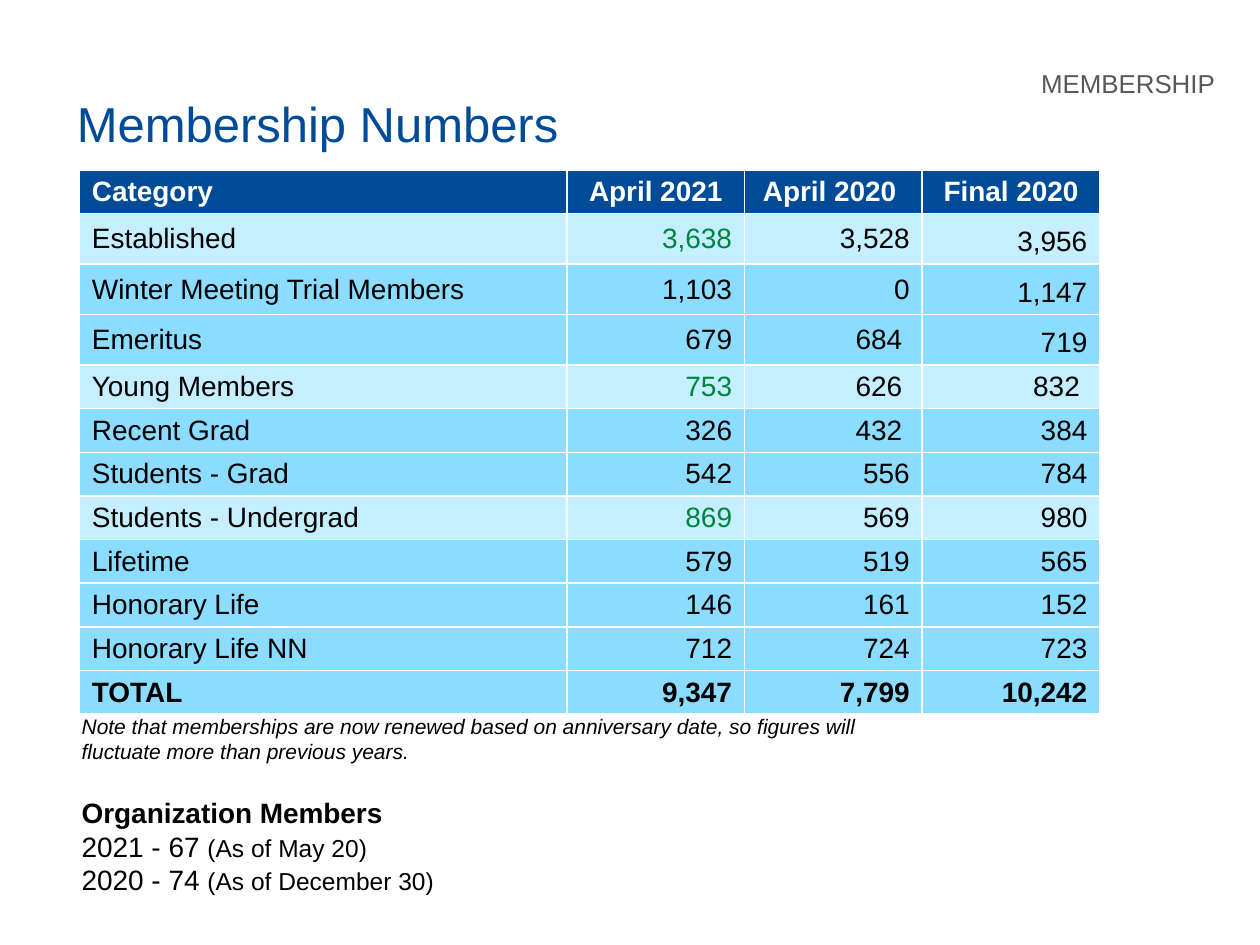
from dataclasses import dataclass

import lxml.etree
import pptx
import pptx.dml.color
import pptx.enum.text
import pptx.oxml.ns
import pptx.util
from pptx.util import Inches, Pt

ALIGN = pptx.enum.text.PP_ALIGN
COLORS = {
    "navy": "004B98",
    "gray": "56595C",
    "black": "000000",
    "white": "FFFFFF",
    "green": "00833F",
    "light": "C5EEFF",
    "blue": "8BDCFF",
}
COLUMN_WIDTHS = (3.87, 1.41, 1.41, 1.41)
ROW_HEIGHT = 4.16 / 12
TALL_ROW_HEIGHT = 0.4
CELL_INSET = 0.1
SHIFTED_INSET = 0.16


@dataclass(frozen=True)
class Row:
    values: tuple[str, str, str, str]
    highlight: bool = False
    tall: bool = False
    header: bool = False
    total: bool = False
    shifted: tuple[int, ...] = ()


@dataclass(frozen=True)
class Span:
    text: str
    size: float
    bold: bool = False
    italic: bool = False


ROWS = (
    Row(("Category", "April 2021", "April 2020", "Final 2020"), header=True, shifted=(2,)),
    Row(("Established", "3,638", "3,528", "3,956"), highlight=True, tall=True),
    Row(("Winter Meeting Trial Members", "1,103", "0", "1,147"), tall=True),
    Row(("Emeritus", "679", "684", "719"), tall=True, shifted=(2,)),
    Row(("Young Members", "753", "626", "832"), highlight=True, shifted=(2, 3)),
    Row(("Recent Grad", "326", "432", "384"), shifted=(2,)),
    Row(("Students - Grad", "542", "556", "784")),
    Row(("Students - Undergrad", "869", "569", "980"), highlight=True),
    Row(("Lifetime", "579", "519", "565")),
    Row(("Honorary Life", "146", "161", "152")),
    Row(("Honorary Life NN", "712", "724", "723")),
    Row(("TOTAL", "9,347", "7,799", "10,242"), total=True),
)

NOTES = (
    (Span("Note that memberships are now renewed based on anniversary date, "
          "so figures will fluctuate more than previous years.", 12, italic=True),),
    (Span("Organization Members", 16, bold=True),),
    (Span("2021 - 67 ", 16), Span("(As of May 20)", 14)),
    (Span("2020 - 74 ", 16), Span("(As of December 30)", 14)),
)


def rgb(name: str) -> pptx.dml.color.RGBColor:
    return pptx.dml.color.RGBColor.from_string(COLORS[name])


def style_run(r, size: float, color: str, bold: bool = False, italic: bool = False) -> None:
    r.font.name = "Arial"
    r.font.size = Pt(size)
    r.font.color.rgb = rgb(color)
    r.font.bold = bold
    r.font.italic = italic


def add_borders(cell) -> None:
    tcPr = cell._tc.get_or_add_tcPr()
    qn = pptx.oxml.ns.qn
    for i, side in enumerate(("lnL", "lnR", "lnT", "lnB")):
        ln = lxml.etree.Element(qn(f"a:{side}"), w=str(Pt(1)))
        fill = lxml.etree.SubElement(ln, qn("a:solidFill"))
        lxml.etree.SubElement(fill, qn("a:srgbClr"), val=COLORS["white"])
        tcPr.insert(i, ln)


def fill_cell(cell, row: Row, column: int) -> None:
    cell.fill.solid()
    cell.fill.fore_color.rgb = rgb(
        "navy" if row.header else "light" if row.highlight else "blue")
    add_borders(cell)
    cell.vertical_anchor = pptx.enum.text.MSO_ANCHOR.MIDDLE
    cell.margin_left = Inches(CELL_INSET)
    cell.margin_right = Inches(SHIFTED_INSET if column in row.shifted else CELL_INSET)
    cell.margin_top = cell.margin_bottom = Inches(0.04)
    cell.text_frame.text = row.values[column]
    p = cell.text_frame.paragraphs[0]
    if column:
        p.alignment = ALIGN.CENTER if row.header else ALIGN.RIGHT
    if row.tall and column == 3:
        p.line_spacing = 1.2
    color = "white" if row.header else "green" if row.highlight and column == 1 else "black"
    style_run(p.runs[0], 16, color, bold=row.header or row.total)


def add_membership_table(s) -> None:
    heights = [TALL_ROW_HEIGHT if row.tall else ROW_HEIGHT for row in ROWS]
    table = s.shapes.add_table(
        len(ROWS), len(COLUMN_WIDTHS), Inches(0.63), Inches(1.35),
        Inches(sum(COLUMN_WIDTHS)), Inches(sum(heights))).table
    for column, width in zip(table.columns, COLUMN_WIDTHS):
        column.width = Inches(width)
    for i, (row, height) in enumerate(zip(ROWS, heights)):
        table.rows[i].height = Inches(height)
        for j in range(len(COLUMN_WIDTHS)):
            fill_cell(table.cell(i, j), row, j)


def add_notes(s) -> None:
    sp = s.shapes.add_textbox(Inches(0.55), Inches(5.61), Inches(6.94), Inches(1.58))
    tf = sp.text_frame
    tf.word_wrap = True
    for i, spans in enumerate(NOTES):
        p = tf.paragraphs[0] if i == 0 else tf.add_paragraph()
        if i == 1:
            p.space_before = Pt(18.4)
        for span in spans:
            r = p.add_run()
            r.text = span.text
            style_run(r, span.size, "black", span.bold, span.italic)


def set_title(s) -> None:
    sp = s.shapes.title
    sp.left, sp.top, sp.width, sp.height = map(Inches, (0.51, 0.69, 4.07, 0.81))
    tf = sp.text_frame
    tf.text = "Membership Numbers"
    tf.word_wrap = False
    tf.auto_size = pptx.enum.text.MSO_AUTO_SIZE.NONE
    tf.vertical_anchor = pptx.enum.text.MSO_ANCHOR.TOP
    p = tf.paragraphs[0]
    p.alignment = ALIGN.LEFT
    style_run(p.runs[0], 28, "navy")


def add_section_label(s) -> None:
    sp = s.shapes.add_textbox(Inches(1.12), Inches(0.49), Inches(8.62), Inches(0.31))
    tf = sp.text_frame
    tf.word_wrap = True
    tf.text = "MEMBERSHIP"
    p = tf.paragraphs[0]
    p.alignment = ALIGN.RIGHT
    style_run(p.runs[0], 14.8, "gray")


def main() -> None:
    prs = pptx.Presentation()
    prs.slide_width, prs.slide_height = Inches(10), Inches(7.5)
    s = prs.slides.add_slide(prs.slide_layouts.get_by_name("Title Only"))
    add_notes(s)
    set_title(s)
    add_section_label(s)
    add_membership_table(s)
    prs.save("out.pptx")


if __name__ == "__main__":
    main()
